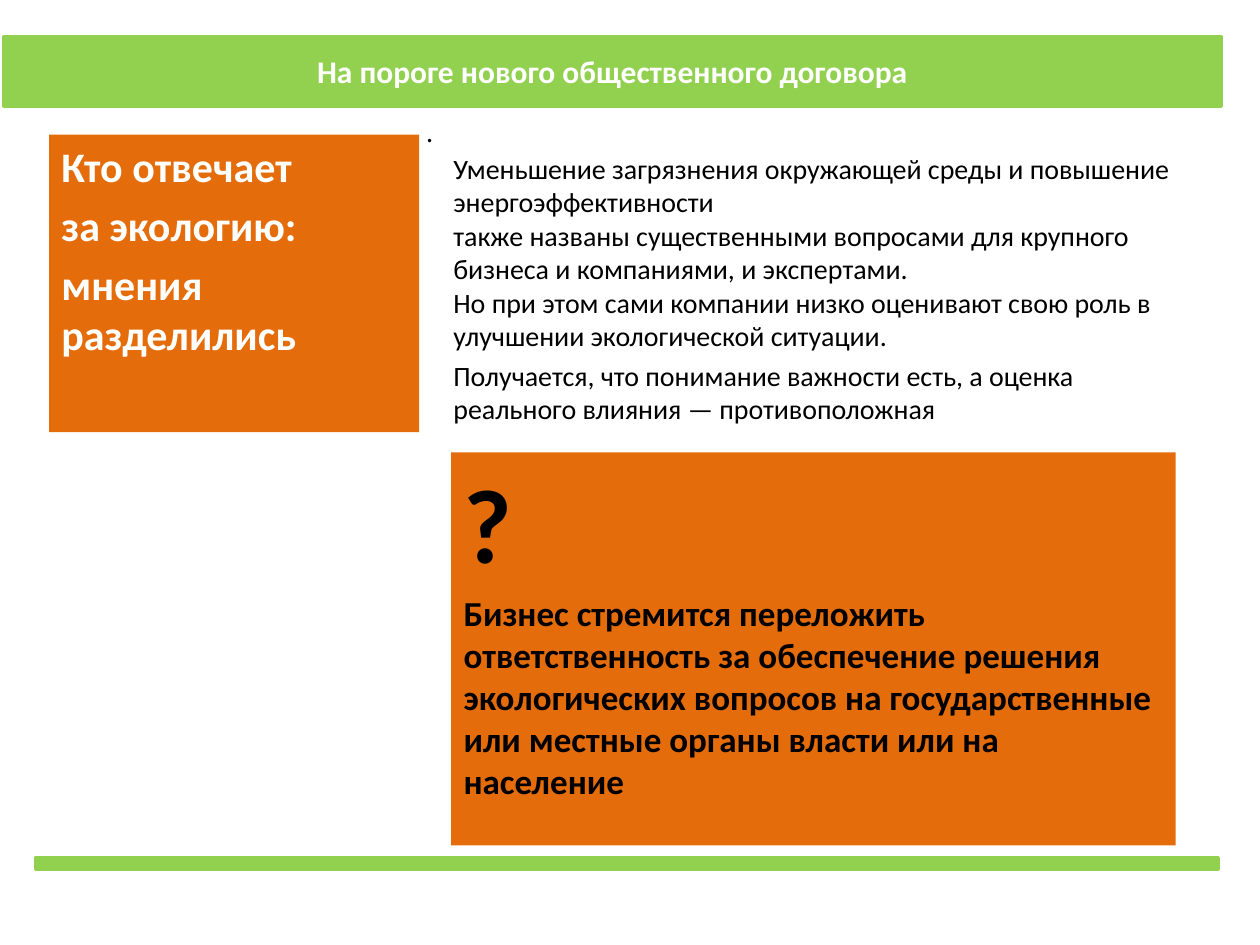
import dataclasses

import pptx
import pptx.dml.color
import pptx.enum.shapes
import pptx.enum.text
import pptx.util

Pt = pptx.util.Pt
ALIGN = pptx.enum.text.PP_ALIGN
ANCHOR = pptx.enum.text.MSO_ANCHOR


@dataclasses.dataclass(frozen=True)
class Theme:
    font: str = "Calibri"
    green: str = "92D050"
    orange: str = "E46C0A"
    white: str = "FFFFFF"
    black: str = "000000"
    dot: float = 16.2
    body: int = 16
    head: int = 18
    claim: int = 20
    topic: int = 24
    mark: int = 60


THEME = Theme()


def rgb(code):
    return pptx.dml.color.RGBColor.from_string(code)


def write(shape, *lines, size, color=THEME.black, bold=False,
          align=ALIGN.LEFT, anchor=ANCHOR.TOP, gap=0.2, inset=3.6):
    """Fill a shape with paragraphs; a line is text or a (text, size) pair."""
    frame = shape.text_frame
    frame.word_wrap = True
    frame.auto_size = pptx.enum.text.MSO_AUTO_SIZE.NONE
    frame.vertical_anchor = anchor
    frame.margin_top = Pt(inset)
    for i, line in enumerate(lines):
        text, points = line if isinstance(line, tuple) else (line, size)
        para = frame.add_paragraph() if i else frame.paragraphs[0]
        para.text = text
        para.alignment = align
        para.space_before = Pt(gap * points)
        for run in para.runs:
            run.font.name = THEME.font
            run.font.size = Pt(points)
            run.font.bold = bold
            run.font.color.rgb = rgb(color)


def add_box(slide, left, top, width, height, color, edge=0):
    box = slide.shapes.add_shape(
        pptx.enum.shapes.MSO_SHAPE.RECTANGLE,
        Pt(left), Pt(top), Pt(width), Pt(height))
    box.shadow.inherit = False
    box.fill.solid()
    box.fill.fore_color.rgb = rgb(color)
    if edge:
        box.line.color.rgb = rgb(color)
        box.line.width = Pt(edge)
    else:
        box.line.fill.background()
    return box


def set_title(slide):
    title = slide.shapes.title
    title.left, title.top = Pt(18), Pt(60.5)
    title.width, title.height = Pt(455), Pt(51)
    write(title, ".", size=THEME.dot, align=ALIGN.CENTER, gap=0, inset=5)


def add_body(slide):
    body = slide.shapes.add_textbox(Pt(252), Pt(82.8), Pt(430), Pt(158.4))
    write(body,
          "Уменьшение загрязнения окружающей среды и повышение "
          "энергоэффективности\v"
          "также названы существенными вопросами для крупного бизнеса "
          "и компаниями, и экспертами.\v"
          "Но при этом сами компании низко оценивают свою роль "
          "в улучшении экологической ситуации.",
          "Получается, что понимание важности есть, а оценка "
          "реального влияния — противоположная",
          size=THEME.body)


def main():
    deck = pptx.Presentation()
    deck.slide_width, deck.slide_height = Pt(720), Pt(540)
    slide = deck.slides.add_slide(deck.slide_layouts.get_by_name("Title Only"))

    # Title and main text
    set_title(slide)
    add_body(slide)

    # Header band
    band = add_box(slide, 2.2, 20.9, 695.5, 39.6, THEME.green, edge=2)
    write(band, "На пороге нового общественного договора", size=THEME.head,
          color=THEME.white, bold=True, align=ALIGN.CENTER,
          anchor=ANCHOR.MIDDLE, gap=0)

    # Topic panel
    topic = add_box(slide, 28, 77, 211.5, 170, THEME.orange)
    write(topic, "Кто отвечает", "за экологию:", "мнения разделились",
          size=THEME.topic, color=THEME.white, bold=True)

    # Question panel
    claim = add_box(slide, 257.8, 258.5, 414, 224.6, THEME.orange)
    write(claim, ("?", THEME.mark),
          "Бизнес стремится переложить ответственность за обеспечение "
          "решения экологических вопросов на государственные или местные "
          "органы власти или на население",
          size=THEME.claim, bold=True)

    # Footer rule
    add_box(slide, 20.2, 490.3, 676, 6.5, THEME.green, edge=2)

    deck.save("out.pptx")


if __name__ == "__main__":
    main()
